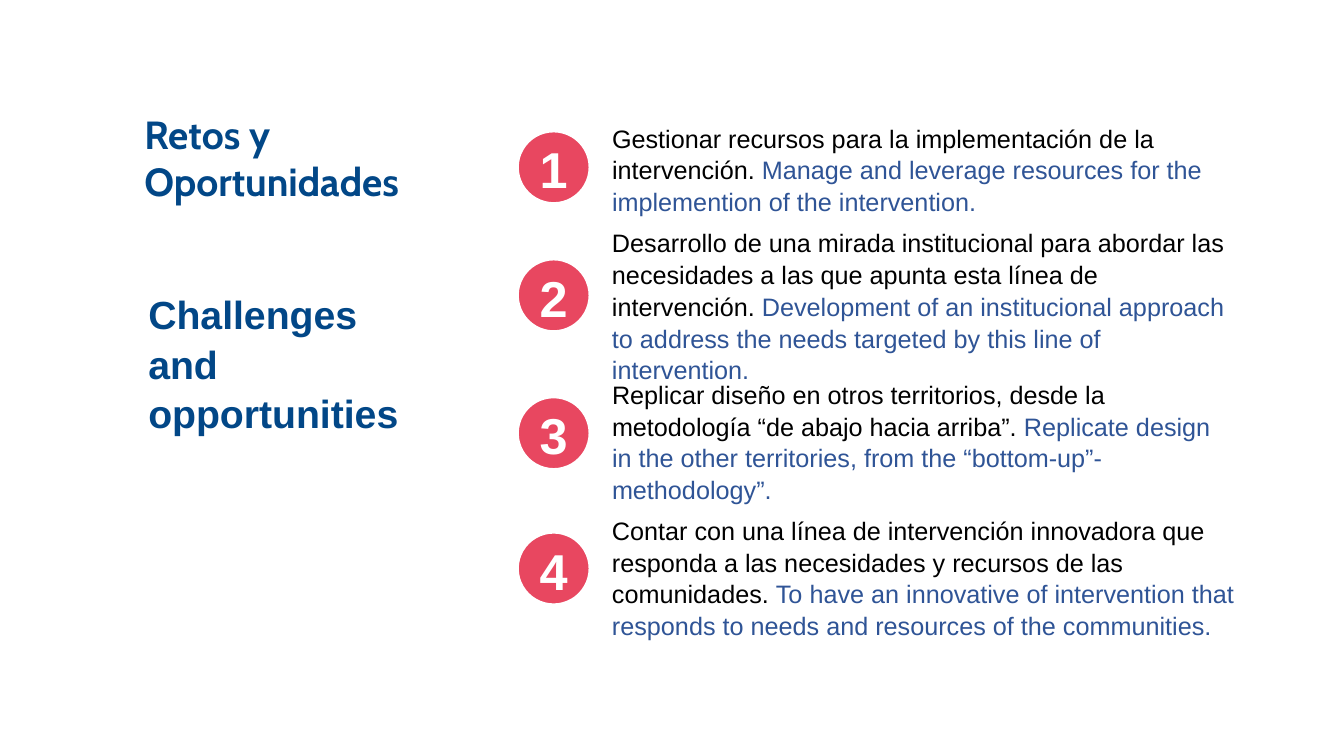
import pptx
import pptx.util
import pptx.dml.color
import pptx.enum.shapes
import pptx.enum.text

INK = {"navy": "024787", "blue": "2F5496", "black": "000000",
       "red": "E84760", "white": "FFFFFF"}
WIDE, HIGH = pptx.util.Inches(13.33), pptx.util.Inches(7.5)
COL, ROW = WIDE / 100, HIGH / 100  # grid of 100 columns by 100 rows
ANCHOR = pptx.enum.text.MSO_ANCHOR
ALIGN = pptx.enum.text.PP_ALIGN

# dot row, text row, text rows, text columns, Spanish, English
ITEMS = [
    (17.33, 15.6, 13.5, 47.2,
     "Gestionar recursos para la implementación de la intervención. ",
     "Manage and leverage resources for the implemention of the intervention."),
    (34.27, 29.6, 21.6, 48.3,
     "Desarrollo de una mirada institucional para abordar las necesidades "
     "a las que apunta esta línea de intervención. ",
     "Development of an institucional approach to address the needs "
     "targeted by this line of intervention."),
    (52.5, 49.6, 17.5, 47.2,
     "Replicar diseño en otros territorios, desde la metodología "
     "“de abajo hacia arriba”. ",
     "Replicate design in the other territories, from the "
     "“bottom-up”-methodology”."),
    (70.4, 67.6, 17.5, 48.3,
     "Contar con una línea de intervención innovadora que responda a las "
     "necesidades y recursos de las comunidades. ",
     "To have an innovative of intervention that responds to needs and "
     "resources of the communities."),
]


def tint(name):
    return pptx.dml.color.RGBColor.from_string(INK[name])


def grid(x, y, w, h):
    return [round(v) for v in (x * COL, y * ROW, w * COL, h * ROW)]


def frame(shape, side, edge, anchor):
    """Set wrapping, insets in inches and anchor; return the text frame."""
    text = shape.text_frame
    text.word_wrap = True
    text.auto_size = pptx.enum.text.MSO_AUTO_SIZE.NONE
    text.margin_left = text.margin_right = pptx.util.Inches(side)
    text.margin_top = text.margin_bottom = pptx.util.Inches(edge)
    text.vertical_anchor = anchor
    return text


def style(para, size, face="Arial", color=None, bold=False,
          align=ALIGN.LEFT, pitch=1.05):
    para.alignment = align
    para.line_spacing = pitch
    font = para.font
    font.size, font.name, font.bold = pptx.util.Pt(size), face, bold
    if color:
        font.color.rgb = tint(color)


def heads(slide, x, y):
    """Place the Spanish title with the English one below it."""
    title = slide.shapes.title
    title.left, title.top, title.width, title.height = grid(x, y, 26.3, 19.9)
    under = slide.shapes.add_textbox(*grid(x + 0.3, y + 23.5, 22.7, 14.3))
    for shape, words, face, pitch in (
            (title, "Retos y Oportunidades", "Cabin", 1.0),
            (under, "Challenges and opportunities", "Arial", 1.05)):
        text = frame(shape, 0.1, 0.1, ANCHOR.TOP)
        text.text = words
        style(text.paragraphs[0], 28, face, "navy", True, pitch=pitch)


def badge(slide, x, y, number):
    dot = slide.shapes.add_shape(
        pptx.enum.shapes.MSO_SHAPE.OVAL, *grid(x, y, 5.4, 9.6))
    dot.shadow.inherit = False
    dot.fill.solid()
    dot.fill.fore_color.rgb = tint("red")
    dot.line.color.rgb = tint("white")
    dot.line.width = pptx.util.Pt(2)
    text = frame(dot, 0, 0, ANCHOR.MIDDLE)
    text.text = str(number)
    style(text.paragraphs[0], 36, color="white", bold=True,
          align=ALIGN.CENTER)


def point(slide, box, spanish, english):
    text = frame(slide.shapes.add_textbox(*grid(*box)), 0.1, 0.05,
                 ANCHOR.MIDDLE)
    para = text.paragraphs[0]
    style(para, 18)
    for words, color in ((spanish, "black"), (english, "blue")):
        run = para.add_run()
        run.text = words
        run.font.color.rgb = tint(color)


def points(slide, x):
    for number, item in enumerate(ITEMS, 1):
        dot, top, rows, cols, spanish, english = item
        badge(slide, x, dot, number)
        point(slide, (x + 6.3, top, cols, rows), spanish, english)


def main():
    deck = pptx.Presentation()
    deck.slide_width, deck.slide_height = WIDE, HIGH
    slide = deck.slides.add_slide(deck.slide_layouts.get_by_name("Title Only"))
    heads(slide, 10, 13.3)
    points(slide, 38.5)
    deck.save("out.pptx")


if __name__ == "__main__":
    main()
